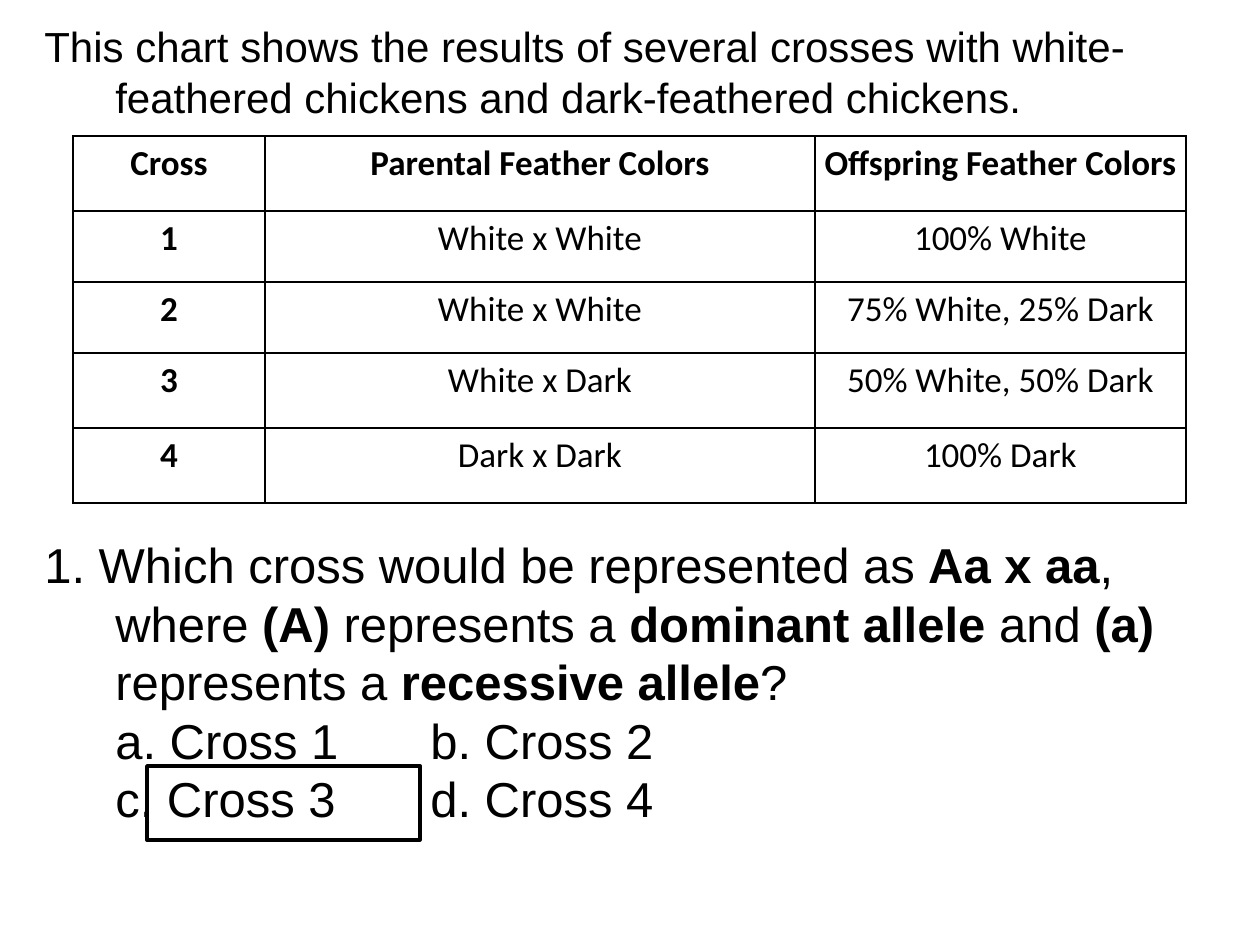
"""Build a quiz slide with a table of chicken crosses and one question."""
from lxml.etree import SubElement
from pptx import Presentation
from pptx.dml.color import RGBColor
from pptx.enum.shapes import MSO_SHAPE
from pptx.enum.text import MSO_ANCHOR, PP_ALIGN
from pptx.oxml.ns import qn
from pptx.util import Emu, Pt

BLACK = "000000"


def px(count):
    return Emu(round(count * 914400 / 126))


def add_run(paragraph, text, font_name, size, bold=False):
    run = paragraph.add_run()
    run.text = text
    run.font.name = font_name
    run.font.size = Pt(size)
    run.font.bold = bold
    run.font.color.rgb = RGBColor.from_string(BLACK)


prs = Presentation()
prs.slide_width, prs.slide_height = px(1260), px(945)
slide = prs.slides.add_slide(prs.slide_layouts[6])

intro = [("This chart shows the results of several crosses with "
          "white-feathered chickens and dark-feathered chickens.", False)]
question = [
    ("1. Which cross would be represented as ", False),
    ("Aa x aa", True),
    (", where ", False),
    ("(A) ", True),
    ("represents a", False),
    (" dominant allele", True),
    (" and ", False),
    ("(a) ", True),
    ("represents a", False),
    (" recessive allele", True),
    ("?", False),
]
first_answers = [("\ta. Cross 1\t\tb. Cross 2", False)]
last_answers = [("\tc. Cross 3\t\td. Cross 4", False)]
passages = [
    (intro, 24, 29, 0),
    (question, 28, 33.5, 236),
    (first_answers, 28, 33.5, 0),
    (last_answers, 28, 33.5, 0),
]

body = slide.shapes.add_textbox(px(32), px(10), px(1187), px(886)).text_frame
body.word_wrap = True
body.vertical_anchor = MSO_ANCHOR.TOP
body.margin_top = px(10)
for index, (pieces, size, leading, gap) in enumerate(passages):
    paragraph = body.add_paragraph() if index else body.paragraphs[0]
    paragraph.line_spacing = Pt(leading)
    paragraph.space_before = Pt(gap)
    properties = paragraph._p.get_or_add_pPr()
    properties.set("marL", str(px(71)))
    properties.set("indent", str(px(-71)))
    for text, bold in pieces:
        add_run(paragraph, text, "Arial", size, bold)

answer_box = slide.shapes.add_shape(
    MSO_SHAPE.RECTANGLE, px(147), px(766), px(273), px(74))
answer_box.shadow.inherit = False
answer_box.fill.background()
answer_box.line.color.rgb = RGBColor.from_string(BLACK)
answer_box.line.width = Pt(2)

crosses = [
    ("Cross", "Parental Feather Colors", "Offspring Feather Colors"),
    ("1", "White x White", "100% White"),
    ("2", "White x White", "75% White, 25% Dark"),
    ("3", "White x Dark", "50% White, 50% Dark"),
    ("4", "Dark x Dark", "100% Dark"),
]
column_widths = [192, 550, 371]
row_heights = [75, 71, 71, 75, 75]
cross_table = slide.shapes.add_table(
    len(crosses), len(column_widths), px(73), px(136),
    px(sum(column_widths)), px(sum(row_heights))).table
for column, width in zip(cross_table.columns, column_widths):
    column.width = px(width)
for row, height in zip(cross_table.rows, row_heights):
    row.height = px(height)

for row_index, entries in enumerate(crosses):
    for column_index, entry in enumerate(entries):
        cell = cross_table.cell(row_index, column_index)
        cell.margin_left = cell.margin_right = px(9)
        cell.margin_top = cell.margin_bottom = 0
        paragraph = cell.text_frame.paragraphs[0]
        paragraph.alignment = PP_ALIGN.CENTER
        paragraph.line_spacing = 1.15
        add_run(paragraph, entry, "Calibri", 20,
                row_index == 0 or column_index == 0)
        cell_properties = cell._tc.get_or_add_tcPr()
        for side in ("a:lnL", "a:lnR", "a:lnT", "a:lnB"):
            border = SubElement(cell_properties, qn(side), w=str(Pt(1)))
            border_fill = SubElement(border, qn("a:solidFill"))
            SubElement(border_fill, qn("a:srgbClr"), val=BLACK)
        cell.fill.background()

prs.save("out.pptx")
